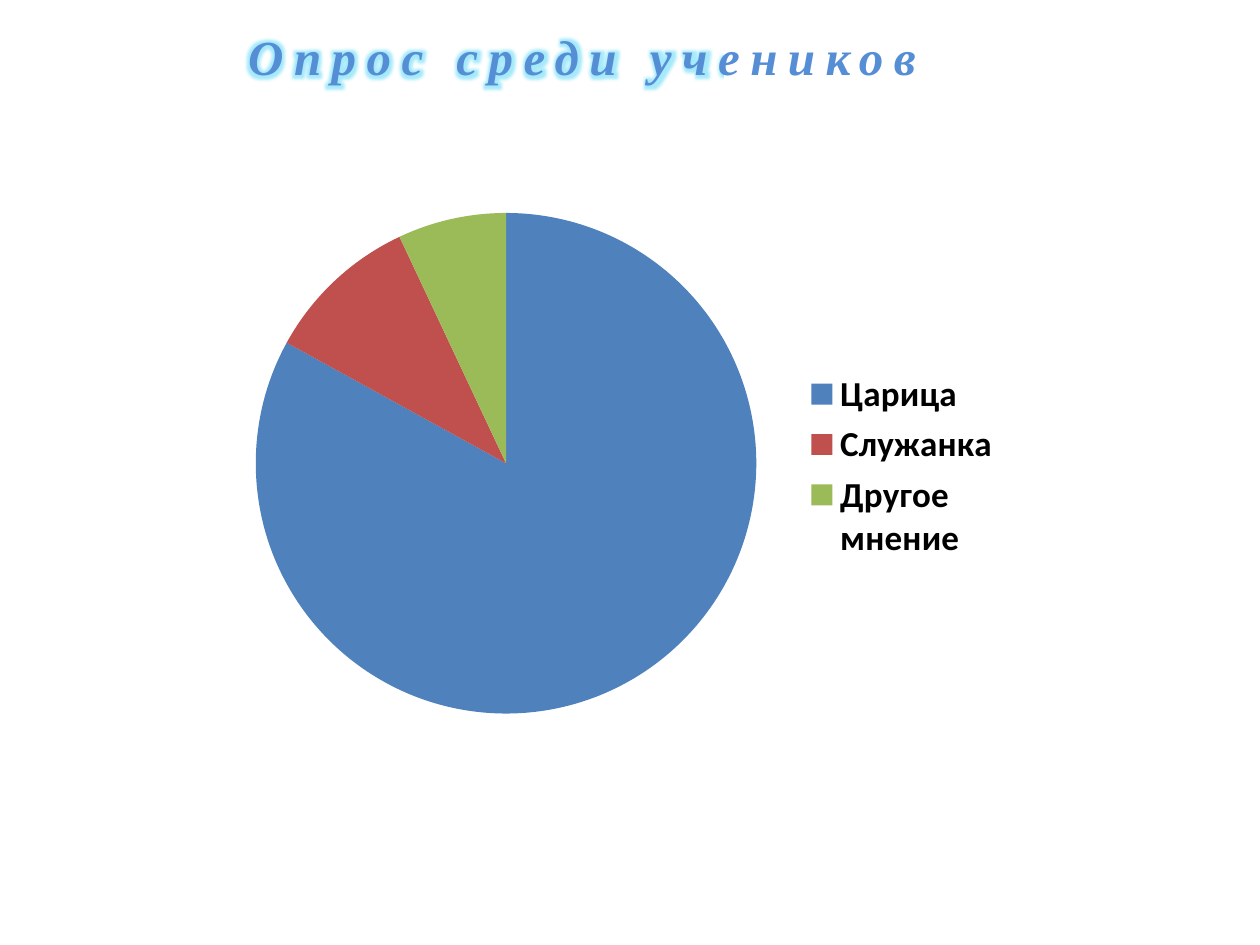
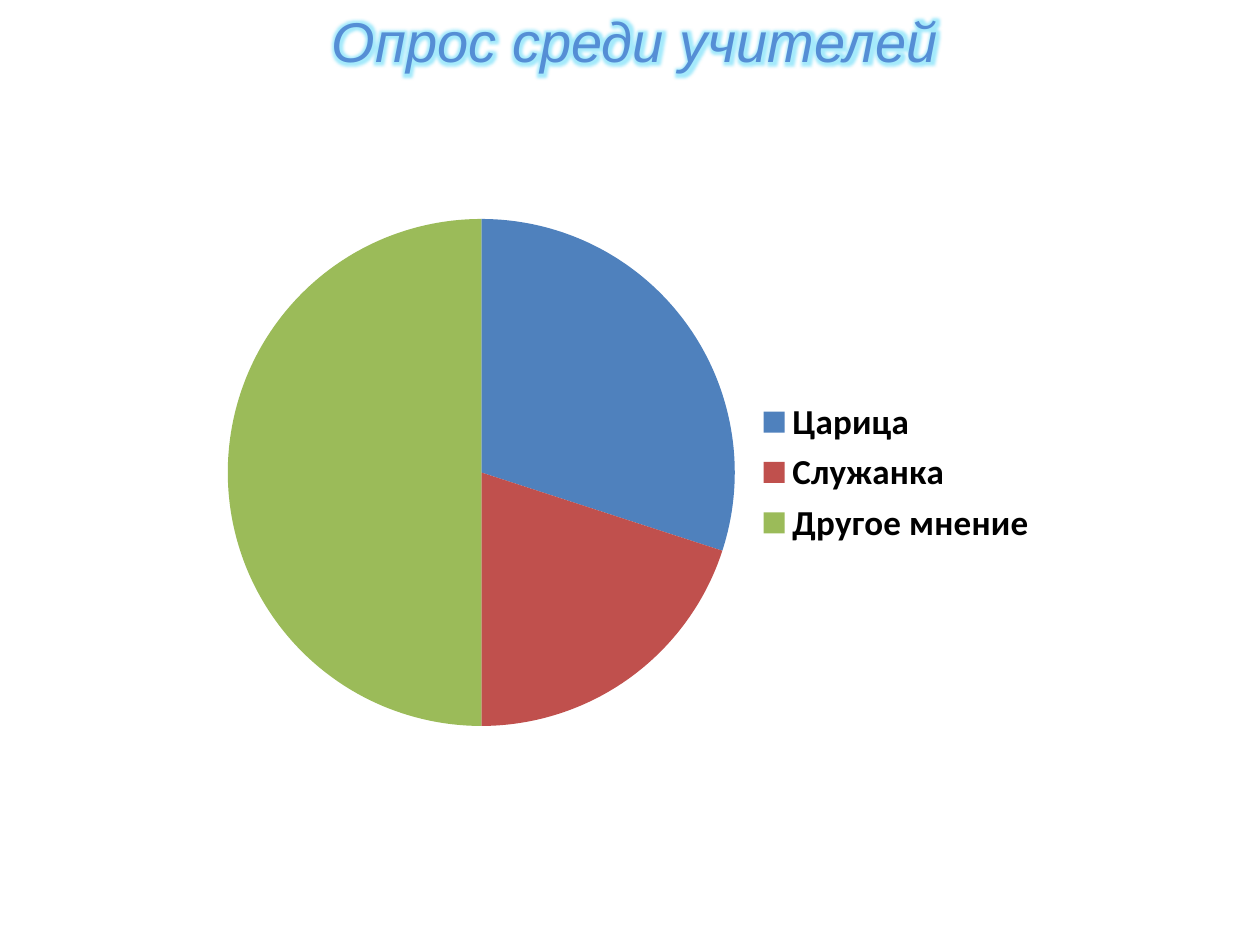
from lxml.etree import SubElement
from pptx import Presentation
from pptx.chart.data import CategoryChartData
from pptx.dml.color import RGBColor
from pptx.enum.chart import XL_CHART_TYPE as ChartType, XL_LEGEND_POSITION as LegendPosition
from pptx.enum.text import MSO_ANCHOR as Anchor, MSO_AUTO_SIZE as AutoSize, PP_ALIGN as Align
from pptx.oxml import parse_xml
from pptx.oxml.ns import nsdecls, qn
from pptx.util import Inches, Pt

TITLE_COLOR = "558ED5"
GLOW_COLOR = "1ECBF7"
TEXT_COLOR = "000000"
OPINION_COLORS = {"Царица": "4F81BD", "Служанка": "C0504D", "Другое мнение": "9BBB59"}
TITLE_ONLY = 5


def rgb(value):
    return RGBColor.from_string(value)


class SurveyDeck:
    """Builds survey slides that share one title style and one pie style."""

    def __init__(self):
        self.presentation = Presentation()
        self.presentation.slide_width = Inches(10)
        self.presentation.slide_height = Inches(7.5)
        self.slide = None

    def add_slide(self):
        layout = self.presentation.slide_layouts[TITLE_ONLY]
        self.slide = self.presentation.slides.add_slide(layout)

    def place(self, box):
        return [Inches(length) for length in box]

    def title(self, text, box, font_name, size, align, bold=False, spacing=0):
        shape = self.slide.shapes.title
        shape.left, shape.top, shape.width, shape.height = self.place(box)
        frame = shape.text_frame
        frame.text = text
        frame.word_wrap = True
        frame.auto_size = AutoSize.SHAPE_TO_FIT_TEXT
        frame.vertical_anchor = Anchor.TOP
        paragraph = frame.paragraphs[0]
        paragraph.alignment = align
        run = paragraph.runs[0]
        run.font.size = Pt(size)
        run.font.bold = bold
        run.font.italic = True
        run.font.color.rgb = rgb(TITLE_COLOR)
        run.font.name = font_name
        properties = run.font._element
        if spacing:
            properties.set("spc", str(spacing * 100))
        properties.find(qn("a:solidFill")).addnext(self.glow())

    def glow(self):
        return parse_xml(
            f'<a:effectLst {nsdecls("a")}><a:glow rad="{Pt(8)}">'
            f'<a:srgbClr val="{GLOW_COLOR}"><a:alpha val="40000"/></a:srgbClr>'
            "</a:glow></a:effectLst>"
        )

    def pie(self, values, box, plot=None):
        data = CategoryChartData()
        data.categories = list(OPINION_COLORS)
        data.add_series("Series 1", values)
        frame = self.slide.shapes.add_chart(ChartType.PIE, *self.place(box), data)
        chart = frame.chart
        chart.has_title = False
        chart.font.size = Pt(18)
        chart.font.name = "Calibri"
        chart.font.color.rgb = rgb(TEXT_COLOR)
        chart.has_legend = True
        chart.legend.position = LegendPosition.RIGHT
        chart.legend.include_in_layout = False
        chart.legend.font.size = Pt(20)
        chart.legend.font.bold = True
        chart.plots[0].vary_by_categories = True
        points = chart.plots[0].series[0].points
        for index, color in enumerate(OPINION_COLORS.values()):
            fill = points[index].format.fill
            fill.solid()
            fill.fore_color.rgb = rgb(color)
        if plot:
            self.plot_layout(chart, plot)

    def plot_layout(self, chart, plot):
        area = chart._chartSpace.chart.plotArea
        for previous in area.findall(qn("c:layout")):
            area.remove(previous)
        layout = parse_xml(f'<c:layout {nsdecls("c")}/>')
        manual = SubElement(layout, qn("c:manualLayout"))
        settings = {"layoutTarget": "inner", "xMode": "edge", "yMode": "edge"}
        settings.update(zip("xywh", plot))
        for name, value in settings.items():
            SubElement(manual, qn(f"c:{name}")).set("val", str(value))
        area.insert(0, layout)

    def save(self):
        self.presentation.save("out.pptx")


def main():
    deck = SurveyDeck()

    deck.add_slide()
    deck.title("Опрос среди учеников", (1.87, 0.16, 8.13, 0.57), "Times New Roman", 28,
               Align.LEFT, bold=True, spacing=6)
    deck.pie((83, 10, 7), (2.03, 1.48, 6.02, 4.44), plot=(0, 0.03, 0.66, 0.93))

    deck.add_slide()
    deck.title("Опрос среди учителей", (1.14, 0, 7.8, 0.64), "Arial", 32, Align.CENTER)
    deck.pie((30, 20, 50), (1.67, 1.53, 6.67, 4.44))

    deck.save()


if __name__ == "__main__":
    main()
